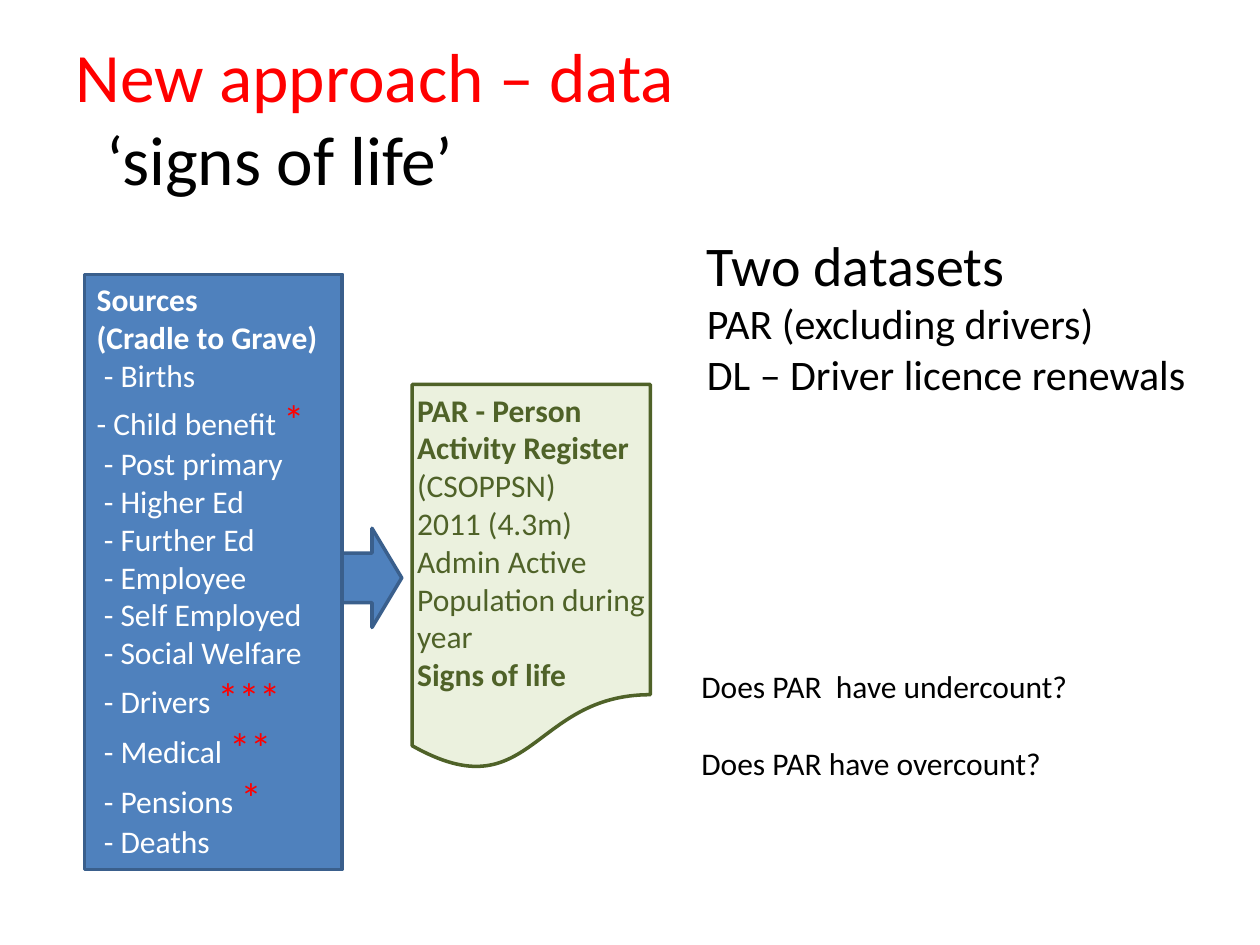
import pptx
import pptx.dml.color
import pptx.enum.shapes
import pptx.enum.text
import pptx.util
from dataclasses import dataclass

Cm = pptx.util.Cm
Pt = pptx.util.Pt
Kind = pptx.enum.shapes.MSO_SHAPE
Anchor = pptx.enum.text.MSO_ANCHOR


@dataclass
class Theme:
    font: str = "Calibri"
    black: str = "000000"
    white: str = "FFFFFF"
    red: str = "FF0000"
    blue: str = "4F81BD"
    navy: str = "3A5F8C"
    pale: str = "EBF1DE"
    green: str = "4F6228"
    title: float = 39.6
    head: float = 32
    large: float = 24
    body: float = 18
    edge: float = 2


def rgb(code):
    return pptx.dml.color.RGBColor.from_string(code)


class Deck:
    def __init__(self, theme):
        self.theme = theme
        self.file = pptx.Presentation()
        self.file.slide_width = Cm(25.4)
        self.file.slide_height = Cm(19.05)
        self.slide = self.file.slides.add_slide(self.file.slide_layouts[6])

    def style(self, run, size, color, bold=False):
        run.font.name = self.theme.font
        run.font.size = Pt(size)
        run.font.bold = bold
        run.font.color.rgb = rgb(color)

    def label(self, shape, lines, color, bold=(), stars=None):
        """Fill a shape with (text, size) lines; stars follow a line in red."""
        frame = shape.text_frame
        frame.word_wrap = True
        frame.text = "\n".join(text for text, size in lines)
        for par, (text, size) in zip(frame.paragraphs, lines):
            par.alignment = pptx.enum.text.PP_ALIGN.LEFT
            self.style(par.runs[0], size, color, text in bold)
            if stars and text in stars:
                run = par.add_run()
                run.text = stars[text]
                self.style(run, self.theme.large, self.theme.red)
        return frame

    def text(self, box, lines, color):
        shape = self.slide.shapes.add_textbox(*map(Cm, box))
        return self.label(shape, lines, color)

    def shape(self, kind, box, fill, line):
        shape = self.slide.shapes.add_shape(kind, *map(Cm, box))
        shape.shadow.inherit = False
        shape.fill.solid()
        shape.fill.fore_color.rgb = rgb(fill)
        shape.line.color.rgb = rgb(line)
        shape.line.width = Pt(self.theme.edge)
        shape.text_frame.vertical_anchor = Anchor.TOP
        return shape


def main():
    theme = Theme()
    deck = Deck(theme)

    # Title: red first line, black indented second line
    lines = [("New approach – data", theme.title), ("‘signs of life’", theme.title)]
    frame = deck.text((1.27, 0.76, 22.86, 3.18), lines, theme.black)
    frame.vertical_anchor = Anchor.MIDDLE
    first, second = frame.paragraphs
    first.runs[0].font.color.rgb = rgb(theme.red)
    second._p.get_or_add_pPr().set("marL", str(Cm(0.63)))

    # Person Activity Register
    bold = ("PAR - Person Activity Register", "Signs of life")
    lines = [bold[0], "(CSOPPSN)", "2011 (4.3m)",
             "Admin Active Population during year", bold[1]]
    page = deck.shape(Kind.FLOWCHART_DOCUMENT, (8.31, 7.75, 4.8, 7.8),
                      theme.pale, theme.green)
    frame = deck.label(page, [(t, theme.body) for t in lines], theme.green, bold)
    frame.margin_left = frame.margin_right = Cm(0.1)

    # Sources and the arrow to the register
    bold = ("Sources", "(Cradle to Grave)")
    stars = {"- Child benefit ": "*", " - Drivers ": "***",
             " - Medical ": "**", " - Pensions ": "*"}
    lines = [*bold, " - Births", "- Child benefit ", " - Post primary",
             " - Higher Ed", " - Further Ed", " - Employee",
             " - Self Employed", " - Social Welfare", " - Drivers ",
             " - Medical ", " - Pensions ", " - Deaths"]
    panel = deck.shape(Kind.RECTANGLE, (1.7, 5.53, 5.2, 12), theme.blue, theme.navy)
    deck.label(panel, [(t, theme.body) for t in lines], theme.white, bold, stars)
    deck.shape(Kind.RIGHT_ARROW, (6.9, 10.65, 1.2, 2), theme.blue, theme.navy)

    # Datasets
    lines = [("Two datasets", theme.head),
             ("PAR (excluding drivers)", theme.large),
             ("DL – Driver licence renewals", theme.large)]
    deck.text((14, 4.52, 10.8, 3.68), lines, theme.black)

    # Questions, one line apart
    lines = [("Does PAR  have undercount?", theme.body),
             ("Does PAR have overcount?", theme.body)]
    frame = deck.text((13.89, 13.33, 11, 2.57), lines, theme.black)
    frame.paragraphs[1].space_before = Pt(22)

    deck.file.save("out.pptx")


if __name__ == "__main__":
    main()
